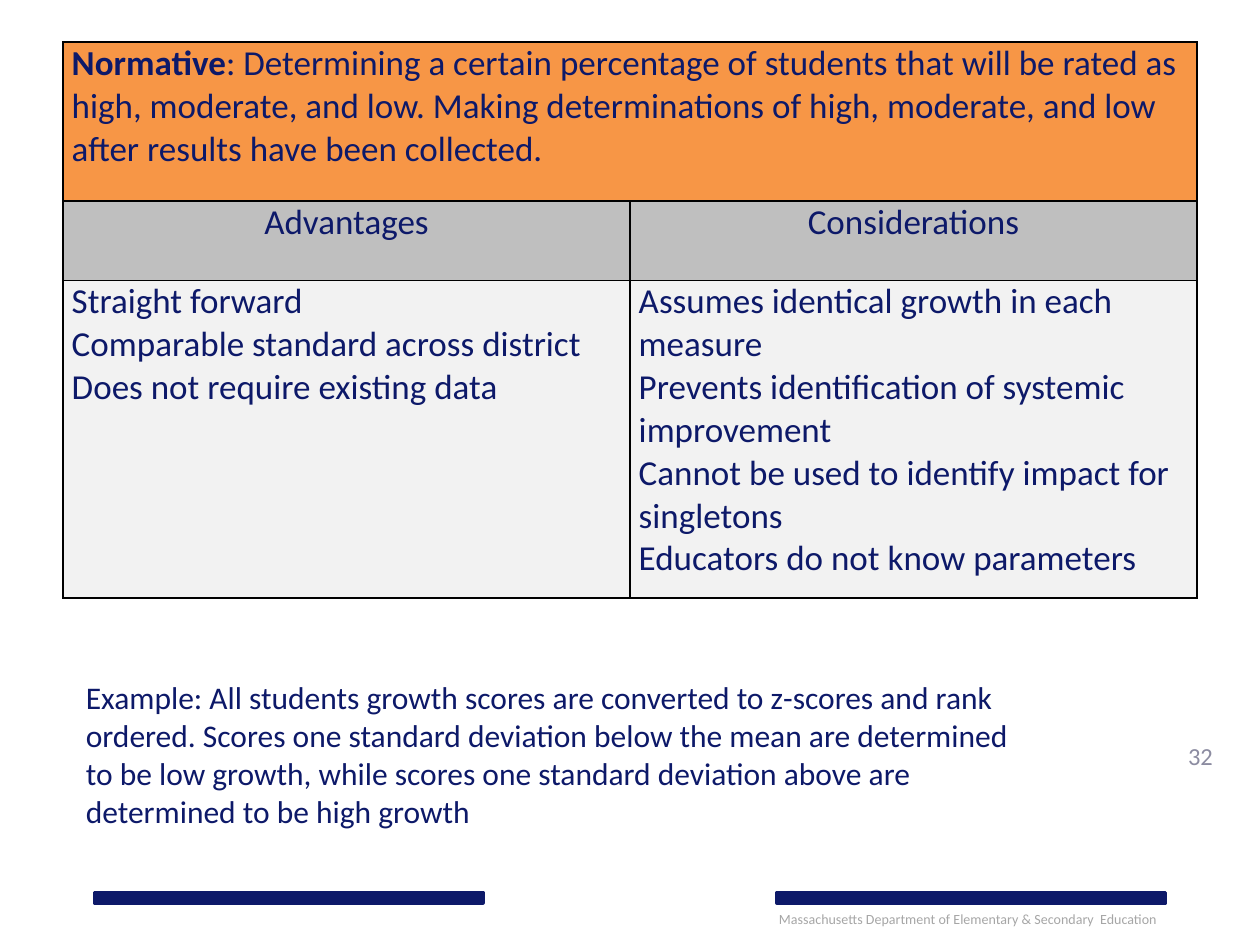
from lxml import etree
from pptx import Presentation
from pptx.dml.color import RGBColor
from pptx.enum.shapes import MSO_SHAPE
from pptx.enum.text import MSO_ANCHOR, PP_ALIGN
from pptx.oxml.ns import qn
from pptx.util import Pt

RECTANGLE = MSO_SHAPE.RECTANGLE
LEFT, CENTER = PP_ALIGN.LEFT, PP_ALIGN.CENTER
TOP, MIDDLE = MSO_ANCHOR.TOP, MSO_ANCHOR.MIDDLE

NAVY, BLACK, ORANGE = "0D1969", "000000", "F79646"
SILVER, PALE = "BFBFBF", "F2F2F2"
FOOTER_GRAY, NUMBER_GRAY = "A6A6A6", "8C8CA1"

DEFINITION = (
    ": Determining a certain percentage of students that will be rated as high, "
    "moderate, and low. Making determinations of high, moderate, and low after "
    "results have been collected."
)
ADVANTAGES = [
    "Straight forward",
    "Comparable standard across district",
    "Does not require existing data",
]
CONSIDERATIONS = [
    "Assumes identical growth in each measure",
    "Prevents identification of systemic improvement",
    "Cannot be used to identify impact for singletons",
    "Educators do not know parameters",
]
EXAMPLE = (
    "Example: All students growth scores are converted to z-scores and rank ordered. "
    "Scores one standard deviation below the mean are determined to be low growth, "
    "while scores one standard deviation above are determined to be high growth"
)


def color(value):
    return RGBColor.from_string(value)


class SlideBuilder:
    font_name = "Calibri"

    def __init__(self, page):
        self.page = page

    def format_span(self, span, size, ink, bold=False):
        span.font.name = self.font_name
        span.font.size = Pt(size)
        span.font.bold = bold
        span.font.color.rgb = color(ink)

    def fill_frame(self, frame, lines, size, ink, align=LEFT):
        frame.text = "\n".join(lines)
        for para in frame.paragraphs:
            para.alignment = align
            for span in para.runs:
                self.format_span(span, size, ink)

    def bar(self, left, top, width, height):
        box = self.page.shapes.add_shape(
            RECTANGLE, Pt(left), Pt(top), Pt(width), Pt(height)
        )
        box.shadow.inherit = False
        box.fill.solid()
        box.fill.fore_color.rgb = color(NAVY)
        box.line.color.rgb = color(NAVY)
        box.line.width = Pt(2)

    def text(self, left, top, width, height, words, size, ink, align=LEFT, anchor=TOP):
        box = self.page.shapes.add_textbox(Pt(left), Pt(top), Pt(width), Pt(height))
        box.text_frame.word_wrap = True
        box.text_frame.vertical_anchor = anchor
        self.fill_frame(box.text_frame, [words], size, ink, align)

    def table(self, left, top, columns, rows):
        frame = self.page.shapes.add_table(
            len(rows), len(columns), Pt(left), Pt(top), Pt(sum(columns)), Pt(sum(rows))
        )
        grid = frame.table
        for column, width in zip(grid.columns, columns):
            column.width = Pt(width)
        for row, height in zip(grid.rows, rows):
            row.height = Pt(height)
        return grid

    def border(self, cell):
        properties = cell._tc.get_or_add_tcPr()
        for side in ("lnL", "lnR", "lnT", "lnB"):
            line = etree.SubElement(properties, qn(f"a:{side}"), w=str(Pt(1)))
            fill = etree.SubElement(line, qn("a:solidFill"))
            etree.SubElement(fill, qn("a:srgbClr"), val=BLACK)

    def cell(self, cell, lines, fill, align=LEFT):
        cell.margin_left = cell.margin_right = Pt(5)
        cell.margin_top = cell.margin_bottom = 0
        self.border(cell)
        cell.fill.solid()
        cell.fill.fore_color.rgb = color(fill)
        self.fill_frame(cell.text_frame, lines, 20, NAVY, align)


def main():
    deck = Presentation()
    deck.slide_width, deck.slide_height = Pt(720), Pt(540)
    builder = SlideBuilder(deck.slides.add_slide(deck.slide_layouts[6]))

    for left in (54, 444):
        builder.bar(left, 510, 222, 6)
    builder.text(
        438, 517, 234, 17,
        "Massachusetts Department of Elementary & Secondary  Education", 8, FOOTER_GRAY,
    )
    builder.text(665, 414, 42, 36, "32", 14, NUMBER_GRAY, CENTER, MIDDLE)

    grid = builder.table(36, 24, [324, 324], [90.8, 45.4, 181.6])
    heading = grid.cell(0, 0)
    builder.cell(heading, ["Normative"], ORANGE)
    builder.cell(grid.cell(0, 1), [], ORANGE)
    heading.merge(grid.cell(0, 1))
    para = heading.text_frame.paragraphs[0]
    para.runs[0].font.bold = True
    span = para.add_run()
    span.text = DEFINITION
    builder.format_span(span, 20, NAVY)

    sides = [("Advantages", ADVANTAGES), ("Considerations", CONSIDERATIONS)]
    for column, (label, points) in enumerate(sides):
        builder.cell(grid.cell(1, column), [label], SILVER, CENTER)
        builder.cell(grid.cell(2, column), points, PALE)

    builder.text(42, 384, 546, 94, EXAMPLE, 18, NAVY)
    deck.save("out.pptx")


if __name__ == "__main__":
    main()
